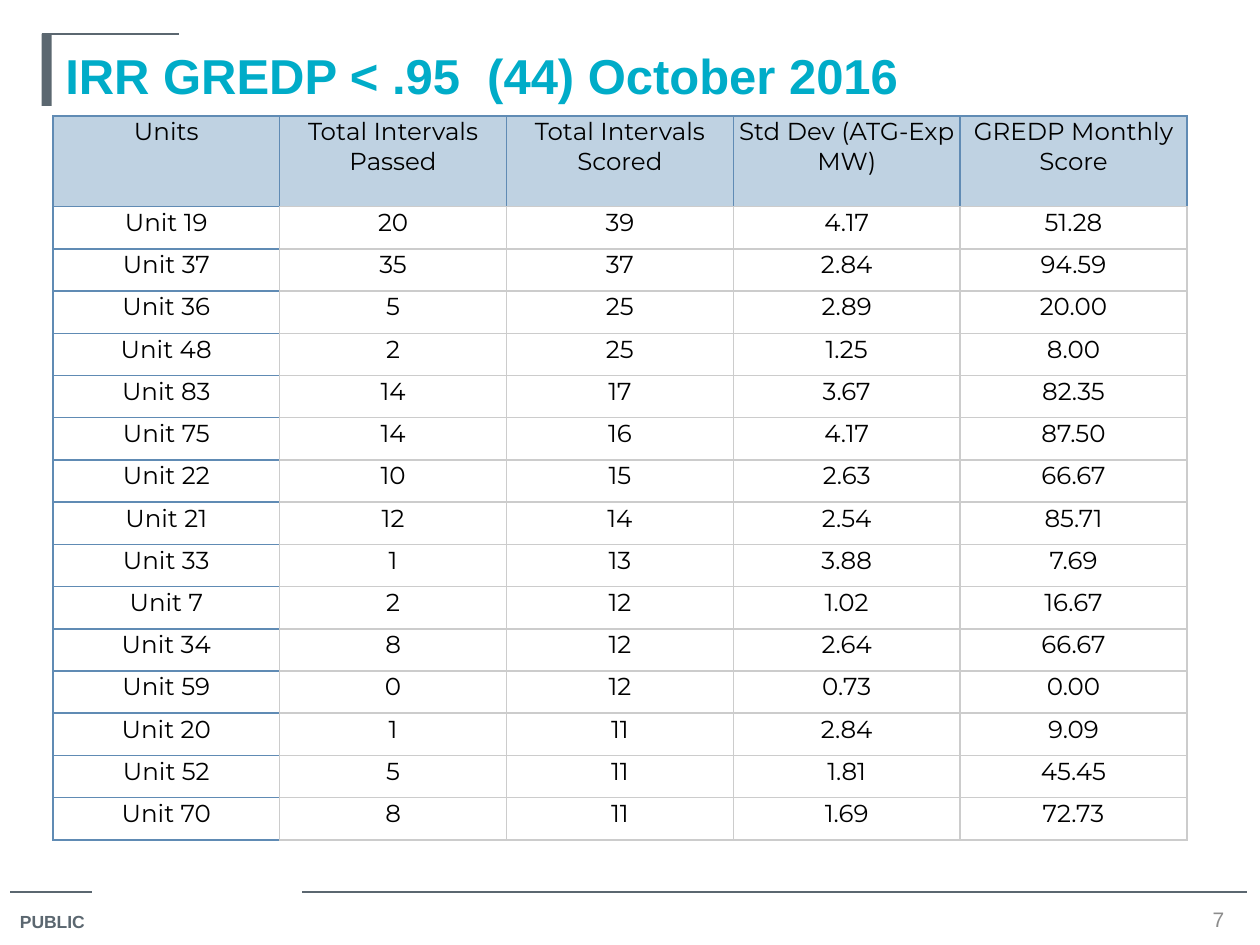
from pptx import Presentation
from pptx.dml.color import RGBColor
from pptx.enum.shapes import MSO_CONNECTOR, MSO_SHAPE
from pptx.enum.text import MSO_ANCHOR, PP_ALIGN
from pptx.oxml.ns import qn
from pptx.util import Inches, Pt
from lxml.etree import SubElement

HUES = {"slate": "5B6770", "teal": "00ACC8", "gray": "8C8C8C", "black": "000000",
        "head": "BFD2E2", "blue": "608BB4", "pale": "CCCCCC"}


def hue(name):
    return RGBColor.from_string(HUES[name])


def style(frame, font, size, color, bold=False, align=PP_ALIGN.LEFT):
    for para in frame.paragraphs:
        para.alignment = align
        for run in para.runs:
            run.font.name = font
            run.font.size = Pt(size)
            run.font.bold = bold
            run.font.color.rgb = hue(color)


deck = Presentation()
deck.slide_width, deck.slide_height = Inches(10), Inches(7.5)
slide = deck.slides.add_slide(deck.slide_layouts[6])

# Rules and accent bar
for left, right, y in [(0.08, 0.73, 7.08), (2.4, 9.9, 7.08), (0.33, 1.42, 0.27)]:
    rule = slide.shapes.add_connector(
        MSO_CONNECTOR.STRAIGHT, Inches(left), Inches(y), Inches(right), Inches(y))
    rule.line.color.rgb = hue("slate")
    rule.line.width = Pt(0.75)
    SubElement(rule._element.spPr, qn("a:effectLst"))

bar = slide.shapes.add_shape(
    MSO_SHAPE.RECTANGLE, Inches(0.33), Inches(0.27), Inches(0.08), Inches(0.57))
bar.shadow.inherit = False
bar.fill.solid()
bar.fill.fore_color.rgb = hue("slate")
bar.line.fill.background()

# Title, footer label and page number
labels = [
    ("IRR GREDP < .95  (44) October 2016", (0.42, 0.27, 9.25, 0.65),
     28, "teal", True, PP_ALIGN.LEFT),
    ("PUBLIC", (0.06, 7.17, 0.77, 0.28), 10, "slate", True, PP_ALIGN.LEFT),
    ("7", (9.42, 7.18, 0.5, 0.23), 12, "gray", False, PP_ALIGN.CENTER),
]
for text, place, size, color, bold, align in labels:
    frame = slide.shapes.add_textbox(*[Inches(n) for n in place]).text_frame
    frame.word_wrap = True
    frame.vertical_anchor = MSO_ANCHOR.MIDDLE
    frame.text = text
    style(frame, "Arial", size, color, bold, align)

# Score table
rows = [
    ("Units", "Total Intervals Passed", "Total Intervals Scored",
     "Std Dev (ATG-Exp MW)", "GREDP Monthly Score"),
    ("Unit 19", "20", "39", "4.17", "51.28"),
    ("Unit 37", "35", "37", "2.84", "94.59"),
    ("Unit 36", "5", "25", "2.89", "20.00"),
    ("Unit 48", "2", "25", "1.25", "8.00"),
    ("Unit 83", "14", "17", "3.67", "82.35"),
    ("Unit 75", "14", "16", "4.17", "87.50"),
    ("Unit 22", "10", "15", "2.63", "66.67"),
    ("Unit 21", "12", "14", "2.54", "85.71"),
    ("Unit 33", "1", "13", "3.88", "7.69"),
    ("Unit 7", "2", "12", "1.02", "16.67"),
    ("Unit 34", "8", "12", "2.64", "66.67"),
    ("Unit 59", "0", "12", "0.73", "0.00"),
    ("Unit 20", "1", "11", "2.84", "9.09"),
    ("Unit 52", "5", "11", "1.81", "45.45"),
    ("Unit 70", "8", "11", "1.69", "72.73"),
]
wide, high, top = 9, 5.75, 0.72
table = slide.shapes.add_table(len(rows), len(rows[0]), Inches(0.42), Inches(0.92),
                               Inches(wide), Inches(high)).table
table.first_row = table.horz_banding = False
for col in table.columns:
    col.width = Inches(wide / len(rows[0]))
for r, values in enumerate(rows):
    table.rows[r].height = Inches((high - top) / (len(rows) - 1) if r else top)
    for c, value in enumerate(values):
        cell = table.cell(r, c)
        cell.margin_left = cell.margin_right = cell.margin_top = Inches(0.01)
        cell.margin_bottom = 0
        cell.text_frame.text = value
        style(cell.text_frame, "Montserrat", 14, "black", align=PP_ALIGN.CENTER)

        # Header and unit column are edged in blue, the scores in pale gray
        edges = {"lnL": r == 0 or c == 0, "lnR": r == 0,
                 "lnT": r == 0 or c == 0, "lnB": c == 0}
        props = cell._tc.get_or_add_tcPr()
        for tag, blue in edges.items():
            line = SubElement(props, qn("a:" + tag), w=str(Pt(1)))
            fill = SubElement(line, qn("a:solidFill"))
            SubElement(fill, qn("a:srgbClr"), val=HUES["blue" if blue else "pale"])
        if r == 0:
            cell.fill.solid()
            cell.fill.fore_color.rgb = hue("head")
        else:
            cell.fill.background()

deck.save("out.pptx")
